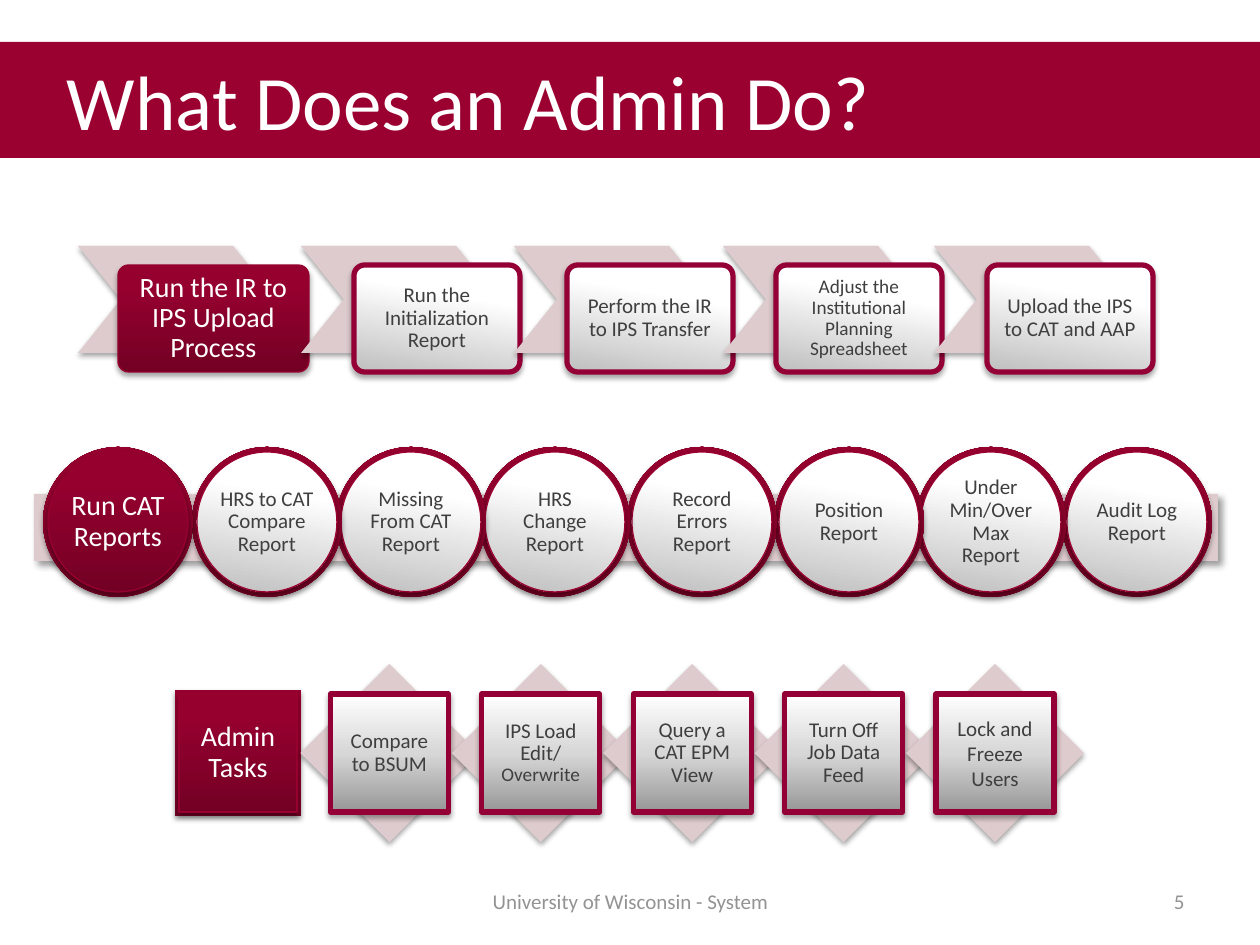
from dataclasses import dataclass

from lxml import etree
from pptx import Presentation
from pptx.dml.color import RGBColor
from pptx.enum.shapes import MSO_SHAPE
from pptx.enum.text import MSO_ANCHOR, PP_ALIGN
from pptx.oxml.ns import qn
from pptx.shapes.autoshape import Shape
from pptx.slide import Slide
from pptx.util import Emu, Pt

RECT, ROUNDED = MSO_SHAPE.RECTANGLE, MSO_SHAPE.ROUNDED_RECTANGLE
CHEVRON, OVAL = MSO_SHAPE.CHEVRON, MSO_SHAPE.OVAL
LEFT, CENTER, RIGHT = PP_ALIGN.LEFT, PP_ALIGN.CENTER, PP_ALIGN.RIGHT
MIDDLE = MSO_ANCHOR.MIDDLE

PX_PER_INCH = 126
FONT = "Calibri"
COLORS = {
    "banner": "9A0030",
    "border": "940036",
    "edge": "97002F",
    "wine_dark": "730024",
    "wine": "95002F",
    "wine_light": "96002F",
    "blush": "DECBCD",
    "white": "FFFFFF",
    "silver": "BFBFBF",
    "pale": "D7D7D7",
    "steel": "979797",
    "text": "3F3F3F",
    "footer": "939393",
    "shadow": "000000",
}


@dataclass(frozen=True)
class Gradient:
    """Color stops as (percent, color name), with a clockwise angle."""
    stops: tuple[tuple[int, str], ...]
    angle: int


@dataclass(frozen=True)
class Shadow:
    """Outer shadow with lengths in points."""
    alpha: int
    blur: float
    distance: float
    angle: int


@dataclass(frozen=True)
class Look:
    """Fill, outline and text style of a labelled shape."""
    fill: Gradient
    line: str
    line_width: float
    text: str


@dataclass(frozen=True)
class Item:
    """One labelled step of a row."""
    label: str
    left: int = 0
    size: int = 12
    spacing: float = 0.9
    small_tail: str = ""


WINE = Gradient(((0, "wine_dark"), (80, "wine"), (100, "wine_light")), 270)
SILVER = Gradient(((30, "white"), (100, "silver")), 100)
STEEL = Gradient(((0, "steel"), (50, "pale"), (100, "white")), 270)
SOFT = Shadow(35, 3.1, 1.8, 90)
BAND = Shadow(40, 4, 3, 45)
LEAD = Look(WINE, "edge", 0.75, "white")
STEP = Look(SILVER, "border", 3, "text")
REPORT = Look(SILVER, "banner", 0.75, "text")
TASK = Look(STEEL, "border", 3, "text")

STEPS = (
    Item("Run the IR to IPS Upload Process", 78, 16),
    Item("Run the Initialization Report", 301),
    Item("Perform the IR to IPS Transfer", 514),
    Item("Adjust the Institutional Planning Spreadsheet", 723, 11),
    Item("Upload the IPS to CAT and AAP", 934),
)
REPORTS = (
    Item("Run CAT Reports", 43, 16),
    Item("HRS to CAT Compare Report", 192),
    Item("Missing From CAT Report", 336),
    Item("HRS Change Report", 480),
    Item("Record Errors Report", 627),
    Item("Position Report", 774),
    Item("Under Min/Over Max Report", 916),
    Item("Audit Log Report", 1062),
)
TASKS = (
    Item("Admin Tasks", size=16),
    Item("Compare to BSUM"),
    Item("IPS Load Edit/ ", small_tail="Overwrite"),
    Item("Query a CAT EPM View"),
    Item("Turn Off Job Data Feed"),
    Item("Lock and Freeze Users", spacing=1.0),
)


def px(length: float) -> Emu:
    """Turn pixels into EMU."""
    return Emu(round(length * 914400 / PX_PER_INCH))


def rgb(name: str) -> RGBColor:
    """Look up a named color."""
    return RGBColor.from_string(COLORS[name])


def add_color(parent: etree._Element, name: str) -> etree._Element:
    """Append a color element to an XML parent."""
    return etree.SubElement(parent, qn("a:srgbClr"), val=COLORS[name])


def apply_gradient(shape: Shape, gradient: Gradient) -> None:
    """Fill a shape with a linear gradient that stays upright."""
    shape.fill.gradient()
    fill = shape.element.spPr.find(qn("a:gradFill"))
    for child in list(fill):
        fill.remove(child)
    fill.set("rotWithShape", "0")
    stops = etree.SubElement(fill, qn("a:gsLst"))
    for position, name in gradient.stops:
        add_color(etree.SubElement(stops, qn("a:gs"), pos=str(position * 1000)), name)
    etree.SubElement(fill, qn("a:lin"), ang=str(gradient.angle * 60000), scaled="0")


def apply_shadow(shape: Shape, shadow: Shadow) -> None:
    """Give a shape an outer shadow."""
    effects = shape.element.spPr.find(qn("a:effectLst"))
    outer = etree.SubElement(
        effects, qn("a:outerShdw"), blurRad=str(Pt(shadow.blur)),
        dist=str(Pt(shadow.distance)), dir=str(shadow.angle * 60000), rotWithShape="0")
    etree.SubElement(add_color(outer, "shadow"), qn("a:alpha"), val=str(shadow.alpha * 1000))


def add_block(page: Slide, kind: MSO_SHAPE, left: float, top: int, width: int, height: int,
              fill: str | Gradient, shadow: Shadow | None = SOFT, rotation: int = 0) -> Shape:
    """Draw an unoutlined shape."""
    shape = page.shapes.add_shape(kind, px(left), px(top), px(width), px(height))
    shape.rotation = rotation
    if isinstance(fill, Gradient):
        apply_gradient(shape, fill)
    else:
        shape.fill.solid()
        shape.fill.fore_color.rgb = rgb(fill)
    shape.line.fill.background()
    shape.shadow.inherit = False
    if shadow:
        apply_shadow(shape, shadow)
    return shape


def write(shape: Shape, item: Item, color: str, align: PP_ALIGN = CENTER) -> None:
    """Set and format the text of a shape."""
    frame = shape.text_frame
    frame.text = item.label
    frame.word_wrap = True
    frame.vertical_anchor = MIDDLE
    para = frame.paragraphs[0]
    para.alignment = align
    para.line_spacing = item.spacing
    if item.small_tail:
        para.add_run().text = item.small_tail
    for index, span in enumerate(para.runs):
        span.font.name = FONT
        span.font.size = Pt(item.size - index)
        span.font.color.rgb = rgb(color)


def add_label(page: Slide, kind: MSO_SHAPE, left: float, top: int, width: int, height: int,
              item: Item, look: Look, margin: int) -> Shape:
    """Draw an outlined shape that carries the text of an item."""
    shape = add_block(page, kind, left, top, width, height, look.fill)
    shape.line.color.rgb = rgb(look.line)
    shape.line.width = Pt(look.line_width)
    frame = shape.text_frame
    frame.margin_left = frame.margin_right = px(margin)
    frame.margin_top = frame.margin_bottom = 0
    write(shape, item, look.text)
    return shape


def add_reports(page: Slide) -> None:
    """Draw the row of circles, the first one on top."""
    add_block(page, RECT, 34, 494, 1184, 67, "blush", BAND)
    for item in reversed(REPORTS):
        look = LEAD if item is REPORTS[0] else REPORT
        rotation = 0 if item is REPORTS[-1] else 45
        add_block(page, OVAL, item.left, 447, 150, 150, WINE, rotation=rotation)
        add_label(page, OVAL, item.left + 5, 452, 140, 140, item, look, 2)


def add_steps(page: Slide) -> None:
    """Draw the row of chevrons with their boxes."""
    for item in STEPS:
        lead = item is STEPS[0]
        offset, width, margin = (40, 191, 18) if lead else (53, 166, 14)
        chevron = add_block(page, CHEVRON, item.left, 246, 198, 107, "blush")
        chevron.adjustments[0] = 0.4
        box = add_label(page, ROUNDED, item.left + offset, 265, width, 107, item,
                        LEAD if lead else STEP, margin)
        box.adjustments[0] = 0.1


def add_tasks(page: Slide) -> None:
    """Draw the row of squares over diamonds."""
    for index, item in enumerate(TASKS):
        left = 175 + index * 151.4
        back, rotation, look = ("blush", 225, TASK) if index else (WINE, 0, LEAD)
        add_block(page, RECT, left, 690, 126, 126, back, rotation=rotation)
        add_label(page, RECT, left + 4, 694, 118, 118, item, look, 18)


def add_footer(page: Slide, left: int, width: int, text: str, align: PP_ALIGN) -> None:
    """Write one footer text."""
    box = page.shapes.add_textbox(px(left), px(876), px(width), px(50))
    write(box, Item(text, spacing=1.0), "footer", align)


def main() -> None:
    """Build the slide and save it."""
    deck = Presentation()
    deck.slide_width, deck.slide_height = px(1260), px(945)
    page = deck.slides.add_slide(deck.slide_layouts[6])
    add_reports(page)
    add_steps(page)
    add_footer(page, 431, 399, "University of Wisconsin - System", CENTER)
    add_footer(page, 903, 294, "5", RIGHT)
    banner = add_block(page, RECT, 0, 42, 1260, 116, "banner", None)
    banner.text_frame.margin_left = px(67)
    write(banner, Item("What Does an Admin Do?", size=44, spacing=1.0), "white", LEFT)
    add_tasks(page)
    deck.save("out.pptx")


if __name__ == "__main__":
    main()
